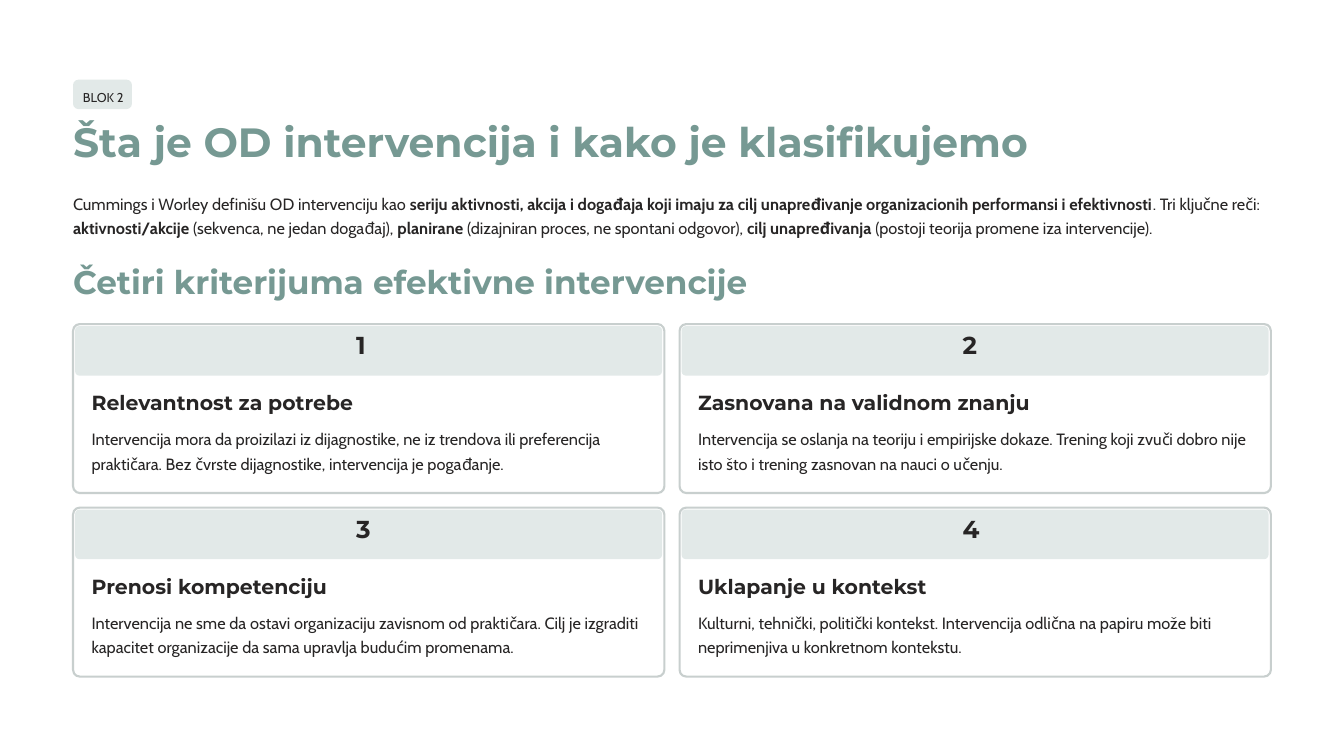
from dataclasses import dataclass

import pptx
import pptx.dml.color
import pptx.enum.shapes
import pptx.enum.text
import pptx.shapes.autoshape
import pptx.slide
import pptx.util

Cm = pptx.util.Cm
Pt = pptx.util.Pt
RGBColor = pptx.dml.color.RGBColor

WHITE = RGBColor(0xFF, 0xFF, 0xFF)
MIST = RGBColor(0xE2, 0xE9, 0xE8)
BORDER = RGBColor(0xC8, 0xCF, 0xCE)
SAGE = RGBColor(0x76, 0x99, 0x93)
INK = RGBColor(0x27, 0x25, 0x25)

HEADING_FONT = "Montserrat"
BODY_FONT = "Cabin"

# Lengths in centimetres
MARGIN = 2.21
CARDS_TOP = 9.8
CARD_WIDTH, CARD_HEIGHT = 17.88, 5.11
COLUMN_STEP, ROW_STEP = 18.34, 5.55
COLUMNS = 2


@dataclass(frozen=True)
class Criterion:
    title: str
    title_width: float
    body: str


CRITERIA = [
    Criterion(
        "Relevantnost za potrebe", 7.95,
        "Intervencija mora da proizilazi iz dijagnostike, ne iz trendova ili preferencija "
        "praktičara. Bez čvrste dijagnostike, intervencija je pogađanje.",
    ),
    Criterion(
        "Zasnovana na validnom znanju", 10.06,
        "Intervencija se oslanja na teoriju i empirijske dokaze. Trening koji zvuči dobro nije "
        "isto što i trening zasnovan na nauci o učenju.",
    ),
    Criterion(
        "Prenosi kompetenciju", 7.14,
        "Intervencija ne sme da ostavi organizaciju zavisnom od praktičara. Cilj je izgraditi "
        "kapacitet organizacije da sama upravlja budućim promenama.",
    ),
    Criterion(
        "Uklapanje u kontekst", 6.93,
        "Kulturni, tehnički, politički kontekst. Intervencija odlična na papiru može biti "
        "neprimenjiva u konkretnom kontekstu.",
    ),
]

DEFINITION = (
    "Cummings i Worley definišu OD intervenciju kao **seriju aktivnosti, akcija i događaja "
    "koji imaju za cilj unapređivanje organizacionih performansi i efektivnosti**. "
    "Tri ključne reči: **aktivnosti/akcije** (sekvenca, ne jedan događaj), **planirane** "
    "(dizajniran proces, ne spontani odgovor), **cilj unapređivanja** "
    "(postoji teorija promene iza intervencije)."
)


def add_text(
    page: pptx.slide.Slide, text: str, left: float, top: float, width: float, height: float,
    *, size: float, spacing: float, font: str = BODY_FONT, color: RGBColor = INK,
    bold: bool = False, wrap: bool = False,
) -> None:
    """Add a text box; spans between ** marks are bold."""
    box = page.shapes.add_textbox(Cm(left), Cm(top), Cm(width), Cm(height))
    frame = box.text_frame
    frame.margin_left = frame.margin_top = frame.margin_right = frame.margin_bottom = 0
    frame.word_wrap = wrap
    frame.auto_size = pptx.enum.text.MSO_AUTO_SIZE.NONE
    para = frame.paragraphs[0]
    para.line_spacing = Pt(spacing)
    for index, part in enumerate(text.split("**")):
        span = para.add_run()
        span.text = part
        span.font.name = font
        span.font.size = Pt(size)
        span.font.bold = bold or index % 2 == 1
        span.font.color.rgb = color


def add_panel(
    page: pptx.slide.Slide, left: float, top: float, width: float, height: float,
    *, fill: RGBColor, rounding: float, border: RGBColor | None = None,
) -> None:
    panel = page.shapes.add_shape(
        pptx.enum.shapes.MSO_SHAPE.ROUNDED_RECTANGLE, Cm(left), Cm(top), Cm(width), Cm(height)
    )
    panel.adjustments[0] = rounding
    panel.shadow.inherit = False
    panel.fill.solid()
    panel.fill.fore_color.rgb = fill
    if border is None:
        panel.line.fill.background()
    else:
        panel.line.color.rgb = border
        panel.line.width = Pt(1.8)


def add_card(page: pptx.slide.Slide, index: int, criterion: Criterion) -> None:
    row, column = divmod(index, COLUMNS)
    left = MARGIN + column * COLUMN_STEP
    top = CARDS_TOP + row * ROW_STEP
    add_panel(page, left, top, CARD_WIDTH, CARD_HEIGHT, fill=WHITE, rounding=0.04, border=BORDER)
    add_panel(page, left + 0.06, top + 0.06, 17.75, 1.5, fill=MIST, rounding=0.09)
    add_text(page, str(index + 1), left + 8.56, top + 0.33, 0.74, 0.94,
             size=21, spacing=21, font=HEADING_FONT, bold=True)
    add_text(page, criterion.title, left + 0.56, top + 1.99, criterion.title_width, 0.79,
             size=17.5, spacing=21.5, font=HEADING_FONT, bold=True)
    add_text(page, criterion.body, left + 0.56, top + 3.03, 16.76, 1.5,
             size=14, spacing=21, wrap=True)


def main() -> None:
    deck = pptx.Presentation()
    deck.slide_width, deck.slide_height = Cm(40.64), Cm(22.86)
    page = deck.slides.add_slide(deck.slide_layouts[6])
    page.background.fill.solid()
    page.background.fill.fore_color.rgb = WHITE

    add_panel(page, MARGIN, 2.41, 1.78, 0.89, fill=MIST, rounding=0.18)
    add_text(page, "BLOK 2", 2.51, 2.57, 1.19, 0.61, size=11, spacing=17)
    add_text(page, "Šta je OD intervencija i kako je klasifikujemo", MARGIN, 3.48, 28.93, 1.55,
             size=35, spacing=43.5, font=HEADING_FONT, color=SAGE, bold=True)
    add_text(page, DEFINITION, MARGIN, 5.72, 36.22, 1.5, size=14, spacing=21, wrap=True)
    add_text(page, "Četiri kriterijuma efektivne intervencije", MARGIN, 7.87, 20.47, 1.24,
             size=28, spacing=35, font=HEADING_FONT, color=SAGE, bold=True)
    for index, criterion in enumerate(CRITERIA):
        add_card(page, index, criterion)

    deck.save("out.pptx")


if __name__ == "__main__":
    main()
